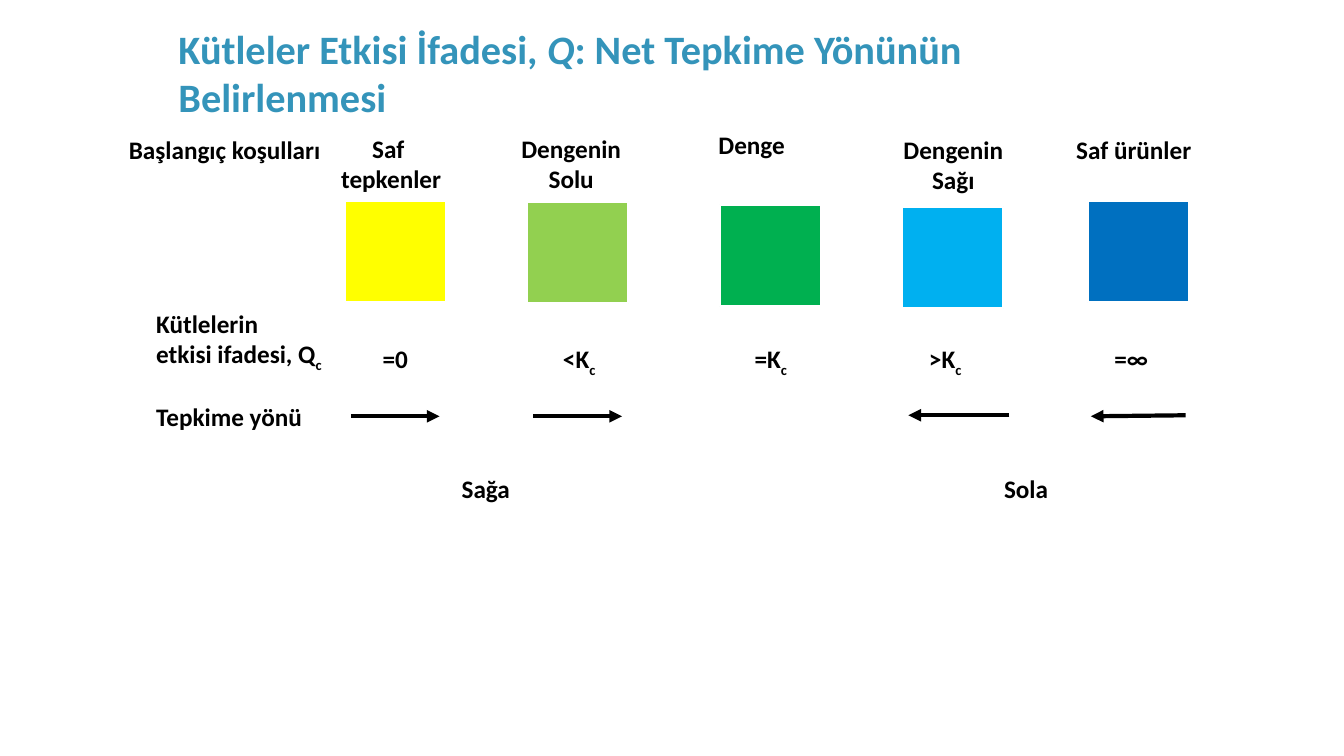
from dataclasses import dataclass

from lxml.etree import SubElement
from pptx import Presentation
from pptx.dml.color import RGBColor
from pptx.enum.shapes import MSO_CONNECTOR as Connector, MSO_SHAPE as Shape
from pptx.enum.text import MSO_ANCHOR as Anchor, MSO_AUTO_SIZE as AutoSize, PP_ALIGN as Align
from pptx.oxml.ns import qn
from pptx.util import Inches, Pt


@dataclass(frozen=True)
class Theme:
    font: str = "Calibri"
    title: str = "3494BA"
    ink: str = "000000"
    outline: str = "FFFFFF"
    title_size: float = 28.8
    body_size: float = 18
    outline_width: float = 1.5
    arrow_width: float = 3


class ReactionSlide:
    """Draws styled elements on one title-only slide."""

    def __init__(self, deck, theme):
        self.theme = theme
        self.page = deck.slides.add_slide(deck.slide_layouts[5])

    def style(self, span, size, color):
        span.font.name = self.theme.font
        span.font.size = Pt(size)
        span.font.bold = True
        span.font.color.rgb = RGBColor.from_string(color)

    def title(self, parts, left, top, width, height):
        box = self.page.shapes.title
        box.left, box.top, box.width, box.height = map(Inches, (left, top, width, height))
        frame = box.text_frame
        frame.auto_size = AutoSize.NONE
        frame.vertical_anchor = Anchor.BOTTOM
        para = frame.paragraphs[0]
        para.alignment = Align.LEFT
        for text, italic in parts:
            span = para.add_run()
            span.text = text
            self.style(span, self.theme.title_size, self.theme.title)
            span.font.italic = italic

    def label(self, text, left, top, width, align=Align.LEFT):
        lines = text.split("\n")
        height = 0.4 if len(lines) == 1 else 0.71
        box = self.page.shapes.add_textbox(*map(Inches, (left, top, width, height)))
        frame = box.text_frame
        frame.word_wrap = False
        frame.auto_size = AutoSize.SHAPE_TO_FIT_TEXT
        for index, line in enumerate(lines):
            para = frame.add_paragraph() if index else frame.paragraphs[0]
            para.alignment = align
            base, _, subscript = line.partition("_")
            for part in filter(None, (base, subscript)):
                span = para.add_run()
                span.text = part
                self.style(span, self.theme.body_size, self.theme.ink)
            if subscript:
                span.font._element.set("baseline", "-25000")

    def square(self, color, left, top):
        box = self.page.shapes.add_shape(
            Shape.RECTANGLE, Inches(left), Inches(top), Inches(1), Inches(1.01))
        box.shadow.inherit = False
        box.fill.solid()
        box.fill.fore_color.rgb = RGBColor.from_string(color)
        box.line.color.rgb = RGBColor.from_string(self.theme.outline)
        box.line.width = Pt(self.theme.outline_width)

    def arrow(self, start, end):
        link = self.page.shapes.add_connector(
            Connector.STRAIGHT, *map(Inches, (*start, *end)))
        link.line.color.rgb = RGBColor.from_string(self.theme.ink)
        link.line.width = Pt(self.theme.arrow_width)
        SubElement(link.line._get_or_add_ln(), qn("a:tailEnd"), type="triangle")
        SubElement(link._element.spPr, qn("a:effectLst"))


TITLE = [("Kütleler Etkisi İfadesi, ", False), ("Q", True),
         (": Net Tepkime Yönünün Belirlenmesi", False)]

ROW_LABELS = [
    ("Başlangıç koşulları", 1.18, 1.28, 2.11),
    ("Kütlelerin\netkisi ifadesi, Q_c", 1.45, 3.01, 1.87),
    ("Tepkime yönü", 1.45, 3.93, 1.66),
    ("Sağa", 4.48, 4.65, 0.68),
    ("Sola", 9.86, 4.65, 0.64),
]

CONDITIONS = [
    ("Saf \ntepkenler", 3.28, 1.27, 1.2),
    ("Dengenin\nSolu", 5.04, 1.27, 1.25),
    ("Denge", 7.02, 1.23, 0.87),
    ("Dengenin\nSağı", 8.83, 1.28, 1.25),
    ("Saf ürünler", 10.54, 1.28, 1.41),
]

QUOTIENT_TOP = 3.36
QUOTIENTS = [("=0", 3.69, 0.46), ("<K_c", 5.48, 0.53), ("=K_c", 7.38, 0.53),
             (">K_c", 9.11, 0.53), ("=∞", 10.95, 0.54)]

ARROWS = [((3.48, 4.13), (4.36, 4.13)), ((5.29, 4.13), (6.17, 4.13)),
          ((10.01, 4.12), (9.01, 4.12)), ((11.76, 4.12), (10.82, 4.13))]

SQUARES = [("FFFF00", 3.42, 1.99), ("92D050", 5.23, 2), ("00B050", 7.14, 2.03),
           ("00B0F0", 8.95, 2.05), ("0070C0", 10.79, 1.99)]


def main():
    deck = Presentation()
    deck.slide_width, deck.slide_height = Inches(13.33), Inches(7.5)
    slide = ReactionSlide(deck, Theme())
    slide.title(TITLE, 1.67, 0.17, 8.71, 1.08)
    for row_label in ROW_LABELS:
        slide.label(*row_label)
    for condition in CONDITIONS:
        slide.label(*condition, Align.CENTER)
    for text, left, width in QUOTIENTS:
        slide.label(text, left, QUOTIENT_TOP, width, Align.CENTER)
    for start, end in ARROWS:
        slide.arrow(start, end)
    for square in SQUARES:
        slide.square(*square)
    deck.save("out.pptx")


if __name__ == "__main__":
    main()
